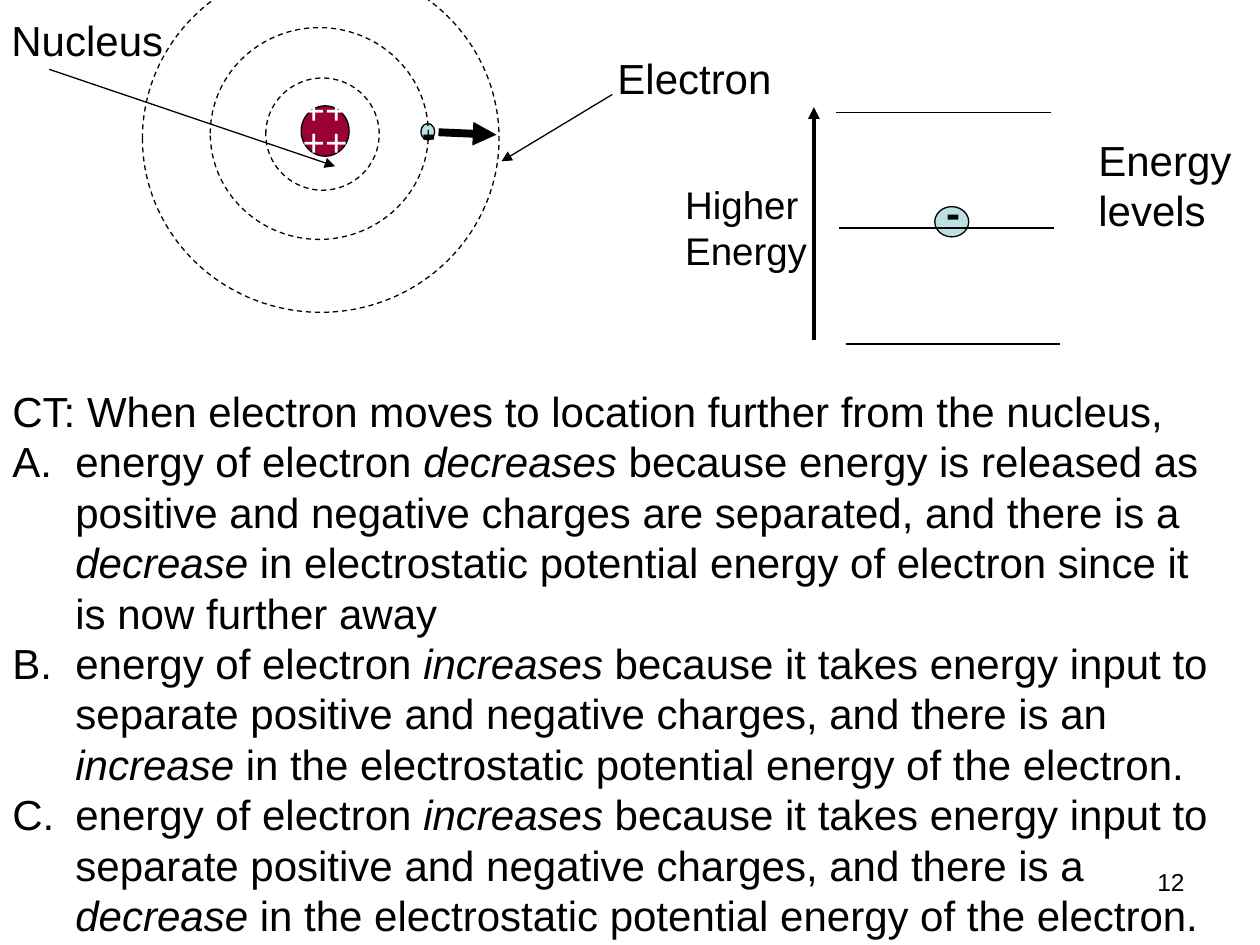
from lxml.etree import SubElement
from pptx import Presentation
from pptx.dml.color import RGBColor
from pptx.enum.dml import MSO_LINE_DASH_STYLE as Dash
from pptx.enum.shapes import MSO_CONNECTOR as Connector, MSO_SHAPE as Shape
from pptx.enum.text import MSO_ANCHOR as Anchor, MSO_AUTO_SIZE as AutoSize, PP_ALIGN as Align
from pptx.oxml.ns import qn
from pptx.util import Pt

BLACK, WHITE = "000000", "FFFFFF"
ELECTRON_BLUE, NUCLEUS_RED = "BBE0E3", "990033"

QUESTION = "CT: When electron moves to location further from the nucleus,"
# Each answer alternates plain and italic pieces
ANSWERS = [
    ["energy of electron ", "decreases",
     " because energy is released as positive and negative charges are separated, and there is a ",
     "decrease",
     " in electrostatic potential energy of electron since it is now further away"],
    ["energy of electron ", "increases",
     " because it takes energy input to separate positive and negative charges, and there is an ",
     "increase", " in the electrostatic potential energy of the electron."],
    ["energy of electron ", "increases",
     " because it takes energy input to separate positive and negative charges, and there is a ",
     "decrease", " in the electrostatic potential energy of the electron."],
]


def color(hex_string):
    return RGBColor.from_string(hex_string)


def format_run(run, size=24, fill=BLACK, bold=False, italic=False):
    font = run.font
    font.name, font.size = "Arial", Pt(size)
    font.bold, font.italic = bold, italic
    font.color.rgb = color(fill)


def add_text(slide, left, top, width, height, text, size=24, bold=False,
             align=Align.LEFT, wrap=False):
    box = slide.shapes.add_textbox(Pt(left), Pt(top), Pt(width), Pt(height))
    text_frame = box.text_frame
    text_frame.word_wrap = wrap
    text_frame.text = text
    for paragraph in text_frame.paragraphs:
        paragraph.alignment = align
        for run in paragraph.runs:
            format_run(run, size, bold=bold)
    return text_frame


def add_ellipse(slide, left, top, width, height, fill=None, dashed=False):
    ellipse = slide.shapes.add_shape(Shape.OVAL, Pt(left), Pt(top), Pt(width), Pt(height))
    ellipse.shadow.inherit = False
    if fill:
        ellipse.fill.solid()
        ellipse.fill.fore_color.rgb = color(fill)
    else:
        ellipse.fill.background()
    ellipse.line.color.rgb = color(BLACK)
    ellipse.line.width = Pt(0.75)
    if dashed:
        ellipse.line.dash_style = Dash.DASH
    return ellipse


def add_line(slide, x1, y1, x2, y2, width=0.75, arrow=False):
    line = slide.shapes.add_connector(Connector.STRAIGHT, Pt(x1), Pt(y1), Pt(x2), Pt(y2))
    line.line.color.rgb = color(BLACK)
    line.line.width = Pt(width)
    if arrow:
        SubElement(line.line._get_or_add_ln(), qn("a:tailEnd"), type="triangle")
    SubElement(line._element.spPr, qn("a:effectLst"))


def set_indent(paragraph, indent, numbered=False):
    properties = paragraph._p.get_or_add_pPr()
    properties.set("marL", str(Pt(indent)))
    properties.set("indent", str(-Pt(indent)))
    if numbered:
        SubElement(properties, qn("a:buFont"), typeface="Arial")
        SubElement(properties, qn("a:buAutoNum"), type="alphaUcPeriod")


def add_question(slide):
    text_frame = add_text(slide, 0, 216.7, 709.2, 326.9, QUESTION, wrap=True)
    text_frame.auto_size = AutoSize.SHAPE_TO_FIT_TEXT
    set_indent(text_frame.paragraphs[0], 27)
    for pieces in ANSWERS:
        paragraph = text_frame.add_paragraph()
        set_indent(paragraph, 36, numbered=True)
        for index, piece in enumerate(pieces):
            run = paragraph.add_run()
            run.text = piece
            format_run(run, italic=index % 2 == 1)


def add_nucleus(slide):
    nucleus = add_ellipse(slide, 172.1, 60.5, 27.4, 28.8, NUCLEUS_RED)
    text_frame = nucleus.text_frame
    text_frame.word_wrap = False
    text_frame.vertical_anchor = Anchor.MIDDLE
    text_frame.text = "++\n++"
    for paragraph in text_frame.paragraphs:
        paragraph.alignment = Align.CENTER
        paragraph.line_spacing = 0.7
        format_run(paragraph.runs[0], 22, WHITE)


def add_atom(slide):
    # Electron moving outwards
    add_ellipse(slide, 240.5, 70.6, 7.9, 9.4, ELECTRON_BLUE)
    add_line(slide, 250.6, 75.6, 283.7, 77, width=4.5, arrow=True)
    add_text(slide, 234, 57.6, 18, 28.8, "-", bold=True, wrap=True)
    add_nucleus(slide)
    # Orbits
    for left, top, width, height in [(120.2, 15.8, 124.6, 121),
                                     (81.4, -20.2, 203.8, 198.7),
                                     (151.9, 44.6, 64.8, 64.1)]:
        add_ellipse(slide, left, top, width, height, dashed=True)
    # Labels with pointers
    add_line(slide, 28.1, 39.6, 191.5, 95, arrow=True)
    add_text(slide, -7.2, 5, 108, 36, " Nucleus")
    add_line(slide, 349.9, 54, 286.6, 92.2, arrow=True)
    add_text(slide, 339.1, 26.6, 109.4, 36, " Electron")


def add_energy_levels(slide):
    add_ellipse(slide, 534.2, 118.1, 19.4, 17.3, ELECTRON_BLUE)
    for level, left in enumerate([478, 479.5, 483.3]):
        y = 64.1 + 66.2 * level
        add_line(slide, left, y, left + 122.6, y)
    add_text(slide, 533.5, 103, 22.3, 36, "-", bold=True)
    add_text(slide, 620.6, 73.4, 90.7, 64.8, "Energy\nlevels")
    # Energy axis
    add_line(slide, 465.1, 194.4, 465.1, 61.2, width=2.25, arrow=True)
    add_text(slide, 384.5, 100.1, 84.2, 59.8, "Higher\nEnergy", size=22)


def main():
    presentation = Presentation()
    presentation.slide_width, presentation.slide_height = Pt(720), Pt(540)
    slide = presentation.slides.add_slide(presentation.slide_layouts[6])
    # Page number
    add_text(slide, 516.2, 491.8, 167.8, 37.4, "12", size=14, align=Align.RIGHT, wrap=True)
    add_question(slide)
    add_atom(slide)
    add_energy_levels(slide)
    presentation.save("out.pptx")


if __name__ == "__main__":
    main()
